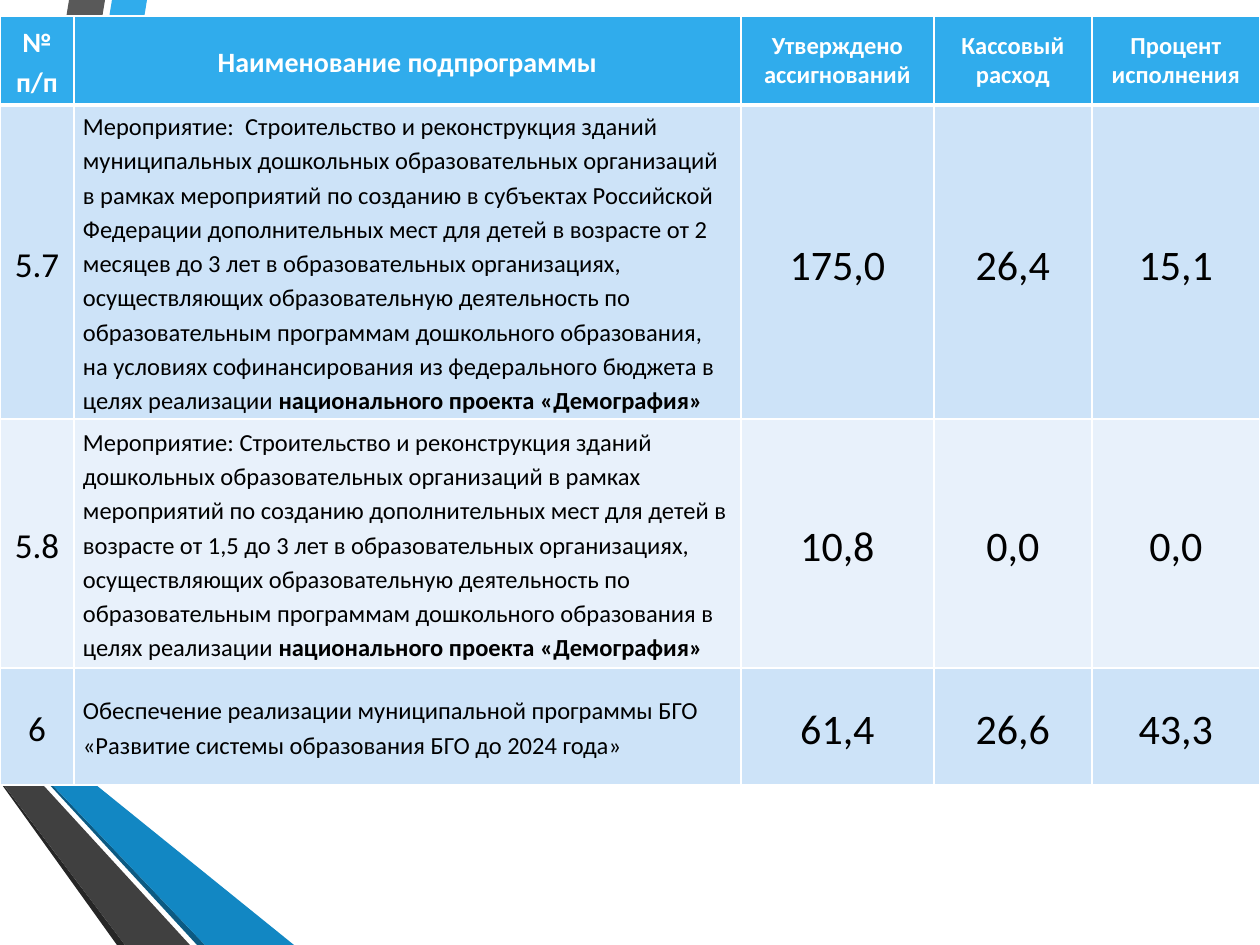
from lxml import etree
from pptx import Presentation
from pptx import util as u
from pptx.dml.color import RGBColor
from pptx.enum import text
from pptx.oxml import ns

PX = u.Inches(1) / 126

STRIPES = [
    ("30ACEC", [(0, 685), (0, 725), (28, 730), (147, 0), (112, 0)]),
    ("595959", [(105, 0), (69, 0), (0, 423), (0, 638)]),
    ("262626", [(0, 780), (0, 782), (117, 945), (125, 945)]),
    ("0C5A82", [(0, 730), (0, 731), (197, 945), (205, 945)]),
    ("1287C3", [(0, 730), (205, 945), (294, 945), (28, 730), (0, 725)]),
    ("404040", [(0, 780), (125, 945), (190, 945), (0, 738)]),
]
COLUMN_WIDTHS = [74, 667, 193, 158, 168]
ROW_HEIGHTS = [89, 314, 249, 117]
HEADER = ["№ п/п", "Наименование подпрограммы", "Утверждено ассигнований",
          "Кассовый расход", "Процент исполнения"]
PROJECT = "национального проекта «Демография»"
ROWS = [
    ["5.7",
     "Мероприятие:  Строительство и реконструкция зданий муниципальных "
     "дошкольных образовательных организаций в рамках мероприятий по созданию "
     "в субъектах Российской Федерации дополнительных мест для детей в возрасте "
     "от 2 месяцев до 3 лет в образовательных организациях, осуществляющих "
     "образовательную деятельность по образовательным программам дошкольного "
     "образования, на условиях софинансирования из федерального бюджета "
     "в целях реализации " + PROJECT,
     "175,0", "26,4", "15,1"],
    ["5.8",
     "Мероприятие: Строительство и реконструкция зданий дошкольных "
     "образовательных организаций в рамках мероприятий по созданию "
     "дополнительных мест для детей в возрасте от 1,5 до 3 лет в "
     "образовательных организациях, осуществляющих образовательную "
     "деятельность по образовательным программам дошкольного образования "
     "в целях реализации " + PROJECT,
     "10,8", "0,0", "0,0"],
    ["6",
     "Обеспечение реализации муниципальной программы БГО «Развитие системы "
     "образования БГО до 2024 года»",
     "61,4", "26,6", "43,3"],
]
HEADER_SIZES = [16, 16, 14, 14, 14]
BODY_SIZES = [20, 14, 24, 24, 24]


def px(length):
    return u.Emu(round(length * PX))


def color(value):
    return RGBColor.from_string(value)


class SlideBuilder:
    font = "Calibri"
    header_fill = "30ACEC"
    band_fills = ("CDE3F8", "E8F1FB")
    border_color = "FFFFFF"

    def __init__(self, presentation):
        self.slide = presentation.slides.add_slide(presentation.slide_layouts[6])

    def polygon(self, fill, points):
        builder = self.slide.shapes.build_freeform(*points[0], scale=PX)
        builder.add_line_segments(points[1:], close=True)
        shape = builder.convert_to_shape()
        shape.shadow.inherit = False
        shape.fill.solid()
        shape.fill.fore_color.rgb = color(fill)
        shape.line.fill.background()

    def table(self, left, top, widths, heights):
        table = self.slide.shapes.add_table(
            len(heights), len(widths), px(left), px(top),
            px(sum(widths)), px(sum(heights))).table
        for column, width in zip(table.columns, widths):
            column.width = px(width)
        for row, height in zip(table.rows, heights):
            row.height = px(height)
        return table

    def borders(self, cell, **widths):
        """Draw cell borders; widths are points by side: L, R, T, B."""
        properties = cell._tc.get_or_add_tcPr()
        for side, width in widths.items():
            line = etree.SubElement(properties, ns.qn(f"a:ln{side}"), w=str(u.Pt(width)))
            fill = etree.SubElement(line, ns.qn("a:solidFill"))
            etree.SubElement(fill, ns.qn("a:srgbClr"), val=self.border_color)

    def cell(self, cell, fill, runs, size, font_color, **paragraph_format):
        """Fill a cell with runs given as (words, bold) pairs."""
        cell.fill.solid()
        cell.fill.fore_color.rgb = color(fill)
        layout = {"margin_left": px(9), "margin_right": px(9), "margin_top": 0,
                  "margin_bottom": 0, "vertical_anchor": text.MSO_ANCHOR.MIDDLE}
        for name, value in layout.items():
            setattr(cell, name, value)
        paragraph = cell.text_frame.paragraphs[0]
        for name, value in paragraph_format.items():
            setattr(paragraph, name, value)
        for words, bold in runs:
            run = paragraph.add_run()
            run.text = words
            for name, value in {"name": self.font, "size": u.Pt(size), "bold": bold}.items():
                setattr(run.font, name, value)
            run.font.color.rgb = color(font_color)

    def header_row(self, table, labels, sizes):
        for column, (label, size) in enumerate(zip(labels, sizes)):
            cell = table.cell(0, column)
            self.borders(cell, L=1, R=1, T=1, B=3)
            self.cell(cell, self.header_fill, [(label, True)], size, "FFFFFF",
                      alignment=text.PP_ALIGN.CENTER,
                      line_spacing=1.15 if column < 2 else 1.0)

    def body_row(self, table, index, values, sizes):
        for column, (value, size) in enumerate(zip(values, sizes)):
            cell = table.cell(index, column)
            self.borders(cell, L=1, R=1, T=3 if index == 1 else 1, B=1)
            plain, project, _ = value.partition(PROJECT)
            runs = [(plain, False)] + ([(project, True)] if project else [])
            align = text.PP_ALIGN.LEFT if column == 1 else text.PP_ALIGN.CENTER
            self.cell(cell, self.band_fills[(index - 1) % 2], runs, size, "000000",
                      alignment=align, line_spacing=1.15)


def main():
    presentation = Presentation()
    presentation.slide_width, presentation.slide_height = px(1260), px(945)
    builder = SlideBuilder(presentation)
    for fill, points in STRIPES:
        builder.polygon(fill, points)
    table = builder.table(0, 16, COLUMN_WIDTHS, ROW_HEIGHTS)
    builder.header_row(table, HEADER, HEADER_SIZES)
    for index, values in enumerate(ROWS, start=1):
        builder.body_row(table, index, values, BODY_SIZES)
    presentation.save("out.pptx")


if __name__ == "__main__":
    main()
